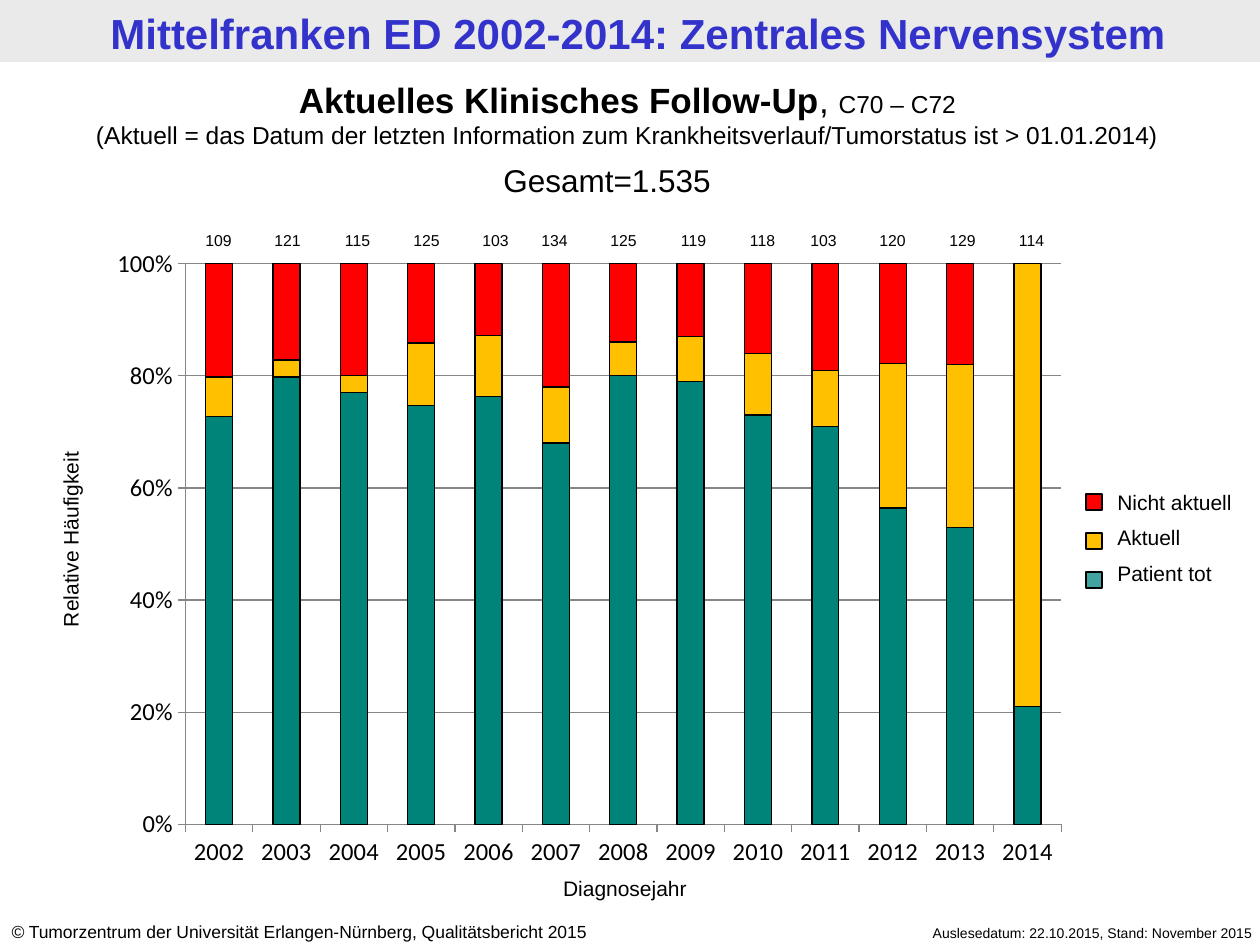
from lxml import etree
from pptx import Presentation
from pptx.chart.data import CategoryChartData
from pptx.dml.color import RGBColor
from pptx.enum.chart import XL_CHART_TYPE, XL_TICK_MARK
from pptx.enum.shapes import MSO_SHAPE
from pptx.enum.text import PP_ALIGN
from pptx.oxml import parse_xml
from pptx.oxml.ns import nsdecls, qn
from pptx.util import Pt

PX = 914400 // 126
LEFT, CENTER, RIGHT = PP_ALIGN.LEFT, PP_ALIGN.CENTER, PP_ALIGN.RIGHT
STACKED = XL_CHART_TYPE.COLUMN_STACKED_100
OUTSIDE = XL_TICK_MARK.OUTSIDE
RECTANGLE = MSO_SHAPE.RECTANGLE

BLACK = RGBColor(0x00, 0x00, 0x00)
GRID = RGBColor(0x86, 0x86, 0x86)
BAND = RGBColor(0xEA, 0xEA, 0xEA)
BLUE = RGBColor(0x33, 0x33, 0xCC)
TEAL = RGBColor(0x00, 0x83, 0x78)
KEY_TEAL = RGBColor(0x00, 0x83, 0x80)
AMBER = RGBColor(0xFF, 0xC0, 0x00)
RED = RGBColor(0xFF, 0x00, 0x00)

TITLE = "Mittelfranken ED 2002-2014: Zentrales Nervensystem"
HEADING = [("Aktuelles Klinisches Follow-Up", 20, True), (", ", 20, False), ("C70 – C72", 14, False)]
EXPLANATION = ("(Aktuell = das Datum der letzten Information zum "
               "Krankheitsverlauf/Tumorstatus ist > 01.01.2014)")
COPYRIGHT = [("©", True),
             (" Tumorzentrum der Universität Erlangen-Nürnberg, Qualitätsbericht 2015", False)]
READ_DATE = "Auslesedatum: 22.10.2015, Stand: November 2015"
YEARS = [str(year) for year in range(2002, 2015)]
SERIES = [
    ("Patient tot", TEAL, [72, 79, 77, 74, 77, 68, 80, 79, 73, 71, 57, 53, 21]),
    ("Aktuell", AMBER, [7, 3, 3, 11, 11, 10, 6, 8, 11, 10, 26, 29, 79]),
    ("Nicht aktuell", RED, [20, 17, 20, 14, 13, 22, 14, 13, 16, 19, 18, 18, 0]),
]
COUNT_GROUPS = [
    (184, [109, 121, 115, 125, 103]),
    (520, [134, 125, 119, 118]),
    (789, [103, 120, 129, 114]),
]
COUNT_STEP = 69.3
LEGEND = [("Nicht aktuell", RED, 100), ("Aktuell", AMBER, 100), ("Patient tot", KEY_TEAL, 74)]
CHART = (97, 236, 983, 644)
PLOT = (185, 264, 876, 561)


def emu(lengths):
    return [length * PX for length in lengths]


def style(font, size, color=BLACK, name="Arial", bold=False):
    font.size, font.name, font.bold = Pt(size), name, bold
    font.color.rgb = color


def add_text(slide, place, lines, size, align=CENTER, color=BLACK, bold=False, gap=0):
    box = slide.shapes.add_textbox(*emu(place))
    frame = box.text_frame
    frame.word_wrap = True
    for index, line in enumerate(lines):
        para = frame.paragraphs[0] if index == 0 else frame.add_paragraph()
        para.text = line
        para.alignment = align
        if index and gap:
            para.space_before = Pt(gap)
        style(para.font, size, color, bold=bold)
    return box


def add_rectangle(slide, place, color, outlined=True, opacity=100):
    shape = slide.shapes.add_shape(RECTANGLE, *emu(place))
    shape.shadow.inherit = False
    shape.fill.solid()
    shape.fill.fore_color.rgb = color
    if outlined:
        shape.line.color.rgb = BLACK
        shape.line.width = Pt(0.75)
    else:
        shape.line.fill.background()
    if opacity < 100:
        tone = shape.fill._xPr.find(qn("a:solidFill"))[0]
        etree.SubElement(tone, qn("a:alpha"), val=str(opacity * 1000))


def place_plot(chart):
    left, top, width, height = CHART
    fractions = [("x", (PLOT[0] - left) / width), ("y", (PLOT[1] - top) / height),
                 ("w", PLOT[2] / width), ("h", PLOT[3] / height)]
    parts = "".join(f'<c:{key} val="{value:.3f}"/>' for key, value in fractions)
    layout = parse_xml(
        f'<c:layout {nsdecls("c")}><c:manualLayout><c:layoutTarget val="inner"/>'
        f'<c:xMode val="edge"/><c:yMode val="edge"/>{parts}</c:manualLayout></c:layout>')
    area = chart._chartSpace.chart.plotArea
    for old in area.findall(qn("c:layout")):
        area.remove(old)
    area.insert(0, layout)


def add_follow_up_chart(slide):
    data = CategoryChartData()
    data.categories = YEARS
    for name, _, values in SERIES:
        data.add_series(name, values)
    chart = slide.shapes.add_chart(STACKED, *emu(CHART), data).chart
    chart.has_legend = False
    chart.has_title = False
    style(chart.font, 18, name="Calibri")
    plot = chart.plots[0]
    plot.gap_width, plot.overlap, plot.vary_by_categories = 150, 100, False
    for series, (_, color, _) in zip(plot.series, SERIES):
        series.format.fill.solid()
        series.format.fill.fore_color.rgb = color
        series.format.line.color.rgb = BLACK
        series.format.line.width = Pt(0.75)
    value_axis = chart.value_axis
    for axis in (chart.category_axis, value_axis):
        axis.major_tick_mark = OUTSIDE
        style(axis.tick_labels.font, 14, name="Calibri")
        axis.format.line.color.rgb = GRID
    value_axis.minimum_scale, value_axis.maximum_scale, value_axis.major_unit = 0, 1, 0.2
    value_axis.tick_labels.number_format = "0%"
    value_axis.tick_labels.number_format_is_linked = False
    value_axis.has_major_gridlines = True
    value_axis.major_gridlines.format.line.color.rgb = GRID
    place_plot(chart)


def main():
    deck = Presentation()
    deck.slide_width, deck.slide_height = emu((1260, 945))
    slide = deck.slides.add_slide(deck.slide_layouts[6])

    add_rectangle(slide, (0, 0, 1260, 62), BAND, outlined=False)
    add_text(slide, (8, 1, 1260, 62), [TITLE], 24, color=BLUE, bold=True)
    add_text(slide, (838, 918, 427, 30), [READ_DATE], 8, RIGHT)
    copyright_box = add_text(slide, (-1, 915, 660, 34), [""], 10, LEFT)
    for text, italic in COPYRIGHT:
        span = copyright_box.text_frame.paragraphs[0].add_run()
        span.text = text
        style(span.font, 10)
        span.font.italic = italic

    add_follow_up_chart(slide)
    axis_title = add_text(slide, (-81, 520, 304, 39), ["Relative Häufigkeit"], 12)
    axis_title.rotation = 270
    add_text(slide, (483, 869, 284, 39), ["Diagnosejahr"], 12)

    for start, counts in COUNT_GROUPS:
        for index, count in enumerate(counts):
            left = start + round(index * COUNT_STEP)
            add_text(slide, (left, 225, 69, 32), [str(count)], 9)

    heading_box = add_text(slide, (-5, 72, 1265, 84), ["", EXPLANATION], 14)
    for text, size, bold in HEADING:
        span = heading_box.text_frame.paragraphs[0].add_run()
        span.text = text
        style(span.font, size, bold=bold)
    add_text(slide, (491, 155, 277, 50), ["Gesamt=1.535"], 18, LEFT)

    labels = [label for label, _, _ in LEGEND]
    add_text(slide, (1105, 483, 179, 115), labels, 12, LEFT, gap=6)
    for index, (_, color, opacity) in enumerate(LEGEND):
        add_rectangle(slide, (1086, 494 + index * 39, 16, 16), color, opacity=opacity)

    deck.save("out.pptx")


if __name__ == "__main__":
    main()
